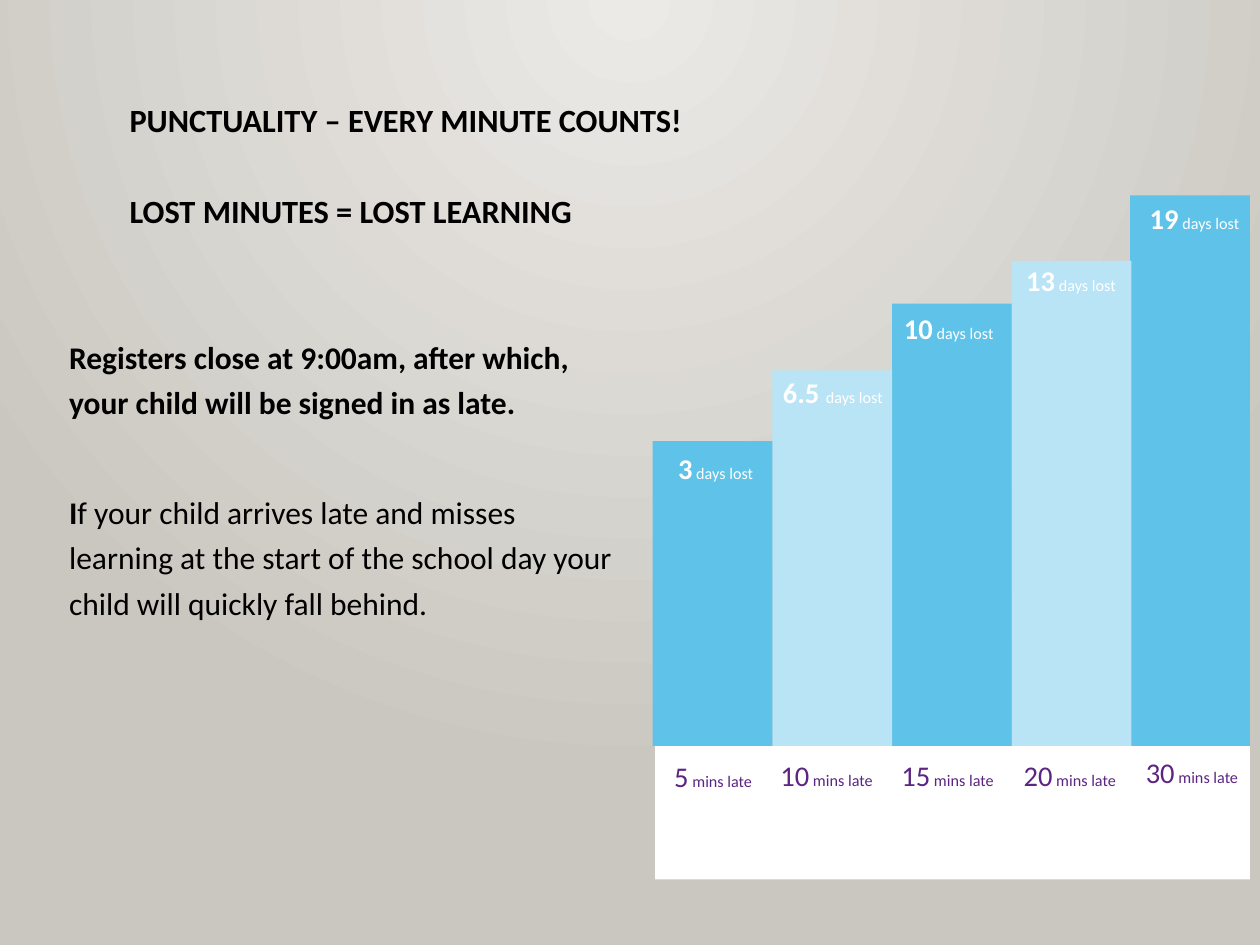
from lxml import etree
from pptx import Presentation
from pptx.dml.color import RGBColor
from pptx.enum.shapes import MSO_SHAPE
from pptx.enum.text import MSO_AUTO_SIZE, MSO_ANCHOR, PP_ALIGN
from pptx.oxml.ns import qn
from pptx.util import Inches, Pt

RECTANGLE = MSO_SHAPE.RECTANGLE
GROW = MSO_AUTO_SIZE.SHAPE_TO_FIT_TEXT
TOP = MSO_ANCHOR.TOP
LEFT, CENTER = PP_ALIGN.LEFT, PP_ALIGN.CENTER

THEME = {
    "font": "Calibri",
    "ink": "000000",
    "white": "FFFFFF",
    "purple": "5C2483",
    "bars": ("5FC2E8", "B9E4F5"),
    "glow": ("ECEAE7", "CAC7C1"),
    "heading": 18.5,
    "body": 18,
    "figure": 16.3,
    "unit": 9.2,
}

HEADING = [
    [("PUNCTUALITY – EVERY MINUTE COUNTS!", True)],
    [("LOST MINUTES = LOST LEARNING", True)],
]
MESSAGE = [
    [("Registers close at 9:00am, after which, your child will be signed in as late.", True)],
    [("I", True),
     ("f your child arrives late and misses learning at the start of the school day "
      "your child will quickly fall behind.", False)],
]

# bar top, (days, unit), days centre, days top, minutes, minutes centre, minutes top
LATENESS = [
    (3.5, ("3", " days lost"), 5.68, 3.53, "5", 5.66, 6.12),
    (2.94, ("6.5 ", "days lost"), 6.61, 2.93, "10", 6.56, 6.11),
    (2.41, ("10", " days lost"), 7.53, 2.42, "15", 7.52, 6.11),
    (2.07, ("13", " days lost"), 8.5, 2.04, "20", 8.49, 6.11),
    (1.55, ("19", " days lost"), 9.48, 1.55, "30", 9.46, 6.09),
]
BASELINE = 5.92
BAR_LEFT, BAR_STEP, BAR_WIDTH = 5.18, 0.95, 0.95
LABEL_WIDTH = 1


def paint_background(slide):
    fill = slide.background.fill
    fill.gradient()
    for stop, color, position in zip(fill.gradient_stops, THEME["glow"], (0, 1)):
        stop.color.rgb = RGBColor.from_string(color)
        stop.position = position
    gradient = slide.element.find(".//" + qn("a:gradFill"))
    gradient.remove(gradient.find(qn("a:lin")))
    circle = etree.SubElement(gradient, qn("a:path"), path="circle")
    etree.SubElement(circle, qn("a:fillToRect"), l="43000", t="0", r="43000", b="100000")


def add_text(shapes, area, paragraphs, align=LEFT, spacing=None, gap=0, inset=0.1, grow=False):
    frame = shapes.add_textbox(*map(Inches, area)).text_frame
    frame.word_wrap = True
    frame.vertical_anchor = TOP
    frame.margin_left = frame.margin_right = Inches(inset)
    if grow:
        frame.auto_size = GROW
    for index, runs in enumerate(paragraphs):
        paragraph = frame.add_paragraph() if index else frame.paragraphs[0]
        paragraph.alignment = align
        paragraph.line_spacing = spacing
        paragraph.space_after = Pt(6)
        if index:
            paragraph.space_before = Pt(gap)
        for text, bold, size, color in runs:
            run = paragraph.add_run()
            run.text = text
            run.font.name = THEME["font"]
            run.font.size = Pt(size)
            run.font.bold = bold
            run.font.color.rgb = RGBColor.from_string(color)


def add_prose(shapes, area, paragraphs, size, spacing, gap):
    styled = [[(text, bold, size, THEME["ink"]) for text, bold in runs] for runs in paragraphs]
    add_text(shapes, area, styled, spacing=spacing, gap=gap)


def add_label(shapes, center, top, height, figure, unit, color, bold, spacing=None):
    runs = [(figure, bold, THEME["figure"], color), (unit, False, THEME["unit"], color)]
    area = (center - LABEL_WIDTH / 2, top, LABEL_WIDTH, height)
    add_text(shapes, area, [runs], CENTER, spacing, inset=0.05, grow=True)


def add_block(shapes, area, color):
    block = shapes.add_shape(RECTANGLE, *map(Inches, area))
    block.shadow.inherit = False
    block.fill.solid()
    block.fill.fore_color.rgb = RGBColor.from_string(color)
    block.line.fill.background()


def add_staircase(slide):
    shapes = slide.shapes.add_group_shape().shapes
    add_block(shapes, (5.2, BASELINE, 4.72, 1.06), THEME["white"])
    for index, (bar_top, *_) in reversed(list(enumerate(LATENESS))):
        area = (BAR_LEFT + index * BAR_STEP, bar_top, BAR_WIDTH, BASELINE - bar_top)
        if index == len(LATENESS) - 1:
            area = (8.97, *area[1:])
        add_block(shapes, area, THEME["bars"][index % 2])
    for _, days, center, top, *_ in LATENESS:
        add_label(shapes, center, top, 1.23, *days, THEME["white"], True)
    for *_, minutes, center, top in LATENESS:
        add_label(shapes, center, top, 0.85, minutes, " mins late",
                  THEME["purple"], False, Pt(THEME["unit"]))


def main():
    deck = Presentation()
    deck.slide_width, deck.slide_height = Inches(10), Inches(7.5)
    slide = deck.slides.add_slide(deck.slide_layouts[6])
    paint_background(slide)
    add_prose(slide.shapes, (0.93, 0.78, 6.17, 1.15), HEADING, THEME["heading"], 0.9, 26)
    add_prose(slide.shapes, (0.45, 2.57, 4.55, 3.77), MESSAGE, THEME["body"], 1.2, 31)
    add_staircase(slide)
    deck.save("out.pptx")


if __name__ == "__main__":
    main()
